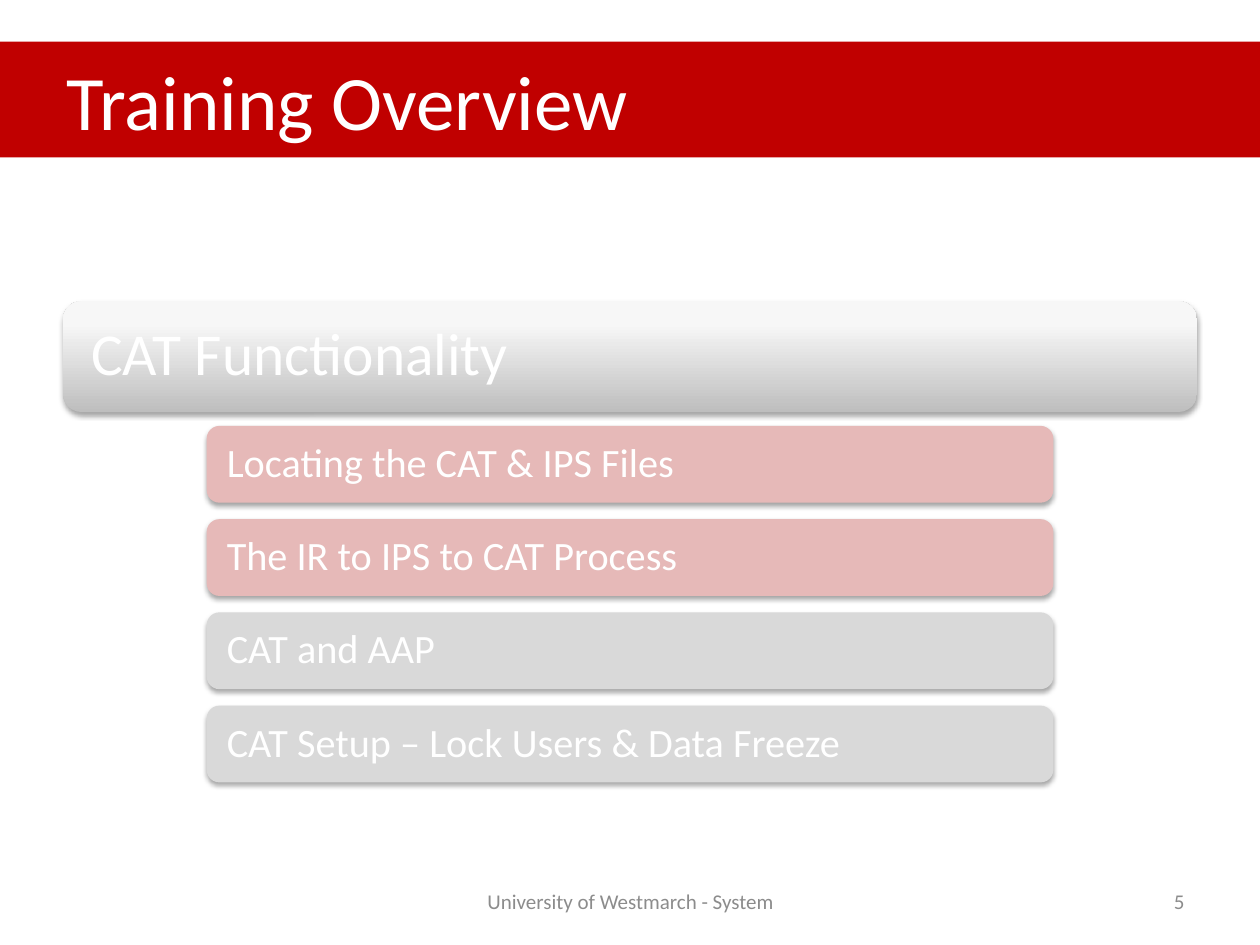
import pptx
import pptx.dml.color
import pptx.enum.shapes
import pptx.enum.text
import pptx.oxml
import pptx.oxml.ns
import pptx.util

Inches = pptx.util.Inches
Shapes = pptx.enum.shapes.MSO_SHAPE
Align = pptx.enum.text.PP_ALIGN
NAMESPACE = pptx.oxml.ns.nsdecls("a")


def color(value):
    return pptx.dml.color.RGBColor.from_string(value)


def gradient_fill(stops, angle):
    stop_list = "".join(
        f'<a:gs pos="{position * 1000}"><a:srgbClr val="{value}"/></a:gs>'
        for position, value in stops
    )
    return pptx.oxml.parse_xml(
        f'<a:gradFill {NAMESPACE} rotWithShape="1"><a:gsLst>{stop_list}</a:gsLst>'
        f'<a:lin ang="{angle * 60000}" scaled="0"/></a:gradFill>'
    )


def soft_shadow():
    return pptx.oxml.parse_xml(
        f'<a:effectLst {NAMESPACE}><a:outerShdw blurRad="{pptx.util.Pt(3.1)}" '
        f'dist="{pptx.util.Pt(1.8)}" dir="5400000" rotWithShape="0">'
        '<a:srgbClr val="000000"><a:alpha val="35000"/></a:srgbClr>'
        "</a:outerShdw></a:effectLst>"
    )


class SlideBuilder:
    font_name = "Calibri"
    white = "FFFFFF"
    red = "C00000"
    pink = "E6B9B8"
    light_gray = "D9D9D9"
    footer_gray = "8C8C8C"
    heading_stops = [(0, "BEBEBE"), (80, "F7F7F7"), (100, "F8F8F8")]

    def __init__(self, slide):
        self.slide = slide

    def label(self, shape, text, size, text_color, margin, align=Align.LEFT, spacing=1.0):
        frame = shape.text_frame
        paragraph = frame.paragraphs[0]
        run = paragraph.add_run()
        run.text = text
        formats = [
            (frame, {
                "word_wrap": True,
                "vertical_anchor": pptx.enum.text.MSO_ANCHOR.MIDDLE,
                "margin_left": Inches(margin),
                "margin_right": Inches(margin),
                "margin_top": Inches(0.05),
                "margin_bottom": Inches(0.05),
            }),
            (paragraph, {"alignment": align, "line_spacing": spacing}),
            (run.font, {"name": self.font_name, "size": pptx.util.Pt(size)}),
        ]
        for target, values in formats:
            for name, value in values.items():
                setattr(target, name, value)
        run.font.color.rgb = color(text_color)

    def box(self, kind, place, fill):
        shape = self.slide.shapes.add_shape(kind, *map(Inches, place))
        shape.shadow.inherit = False
        shape.line.fill.background()
        shape.fill.solid()
        shape.fill.fore_color.rgb = color(fill)
        return shape

    def banner(self, place, text):
        shape = self.box(Shapes.RECTANGLE, place, self.red)
        self.label(shape, text, 44, self.white, 0.53)

    def card(self, place, text, size, margin, fill):
        shape = self.box(Shapes.ROUNDED_RECTANGLE, place, fill)
        properties = shape.element.spPr
        effects = properties.find(pptx.oxml.ns.qn("a:effectLst"))
        properties.replace(effects, soft_shadow())
        self.label(shape, text, size, self.white, margin, spacing=0.9)
        return shape

    def heading(self, place, text):
        shape = self.card(place, text, 34, 0.18, self.light_gray)
        properties = shape.element.spPr
        solid = properties.find(pptx.oxml.ns.qn("a:solidFill"))
        properties.replace(solid, gradient_fill(self.heading_stops, 270))

    def footer(self, place, text, align):
        shape = self.slide.shapes.add_textbox(*map(Inches, place))
        self.label(shape, text, 12, self.footer_gray, 0.1, align)


def main():
    presentation = pptx.Presentation()
    presentation.slide_width = Inches(10)
    presentation.slide_height = Inches(7.5)
    builder = SlideBuilder(presentation.slides.add_slide(presentation.slide_layouts[6]))

    builder.heading((0.5, 2.39, 9, 0.88), "CAT Functionality")
    topics = [
        ("Locating the CAT & IPS Files", builder.pink),
        ("The IR to IPS to CAT Process", builder.pink),
        ("CAT and AAP", builder.light_gray),
        ("CAT Setup – Lock Users & Data Freeze", builder.light_gray),
    ]
    for index, (text, fill) in enumerate(topics):
        builder.card((1.64, 3.38 + index * 0.74, 6.72, 0.61), text, 23, 0.13, fill)

    builder.footer((3.42, 6.95, 3.17, 0.4), "University of Westmarch - System", Align.CENTER)
    builder.footer((7.17, 6.95, 2.33, 0.4), "5", Align.RIGHT)
    builder.banner((0, 0.33, 10, 0.92), "Training Overview")

    presentation.save("out.pptx")


if __name__ == "__main__":
    main()
